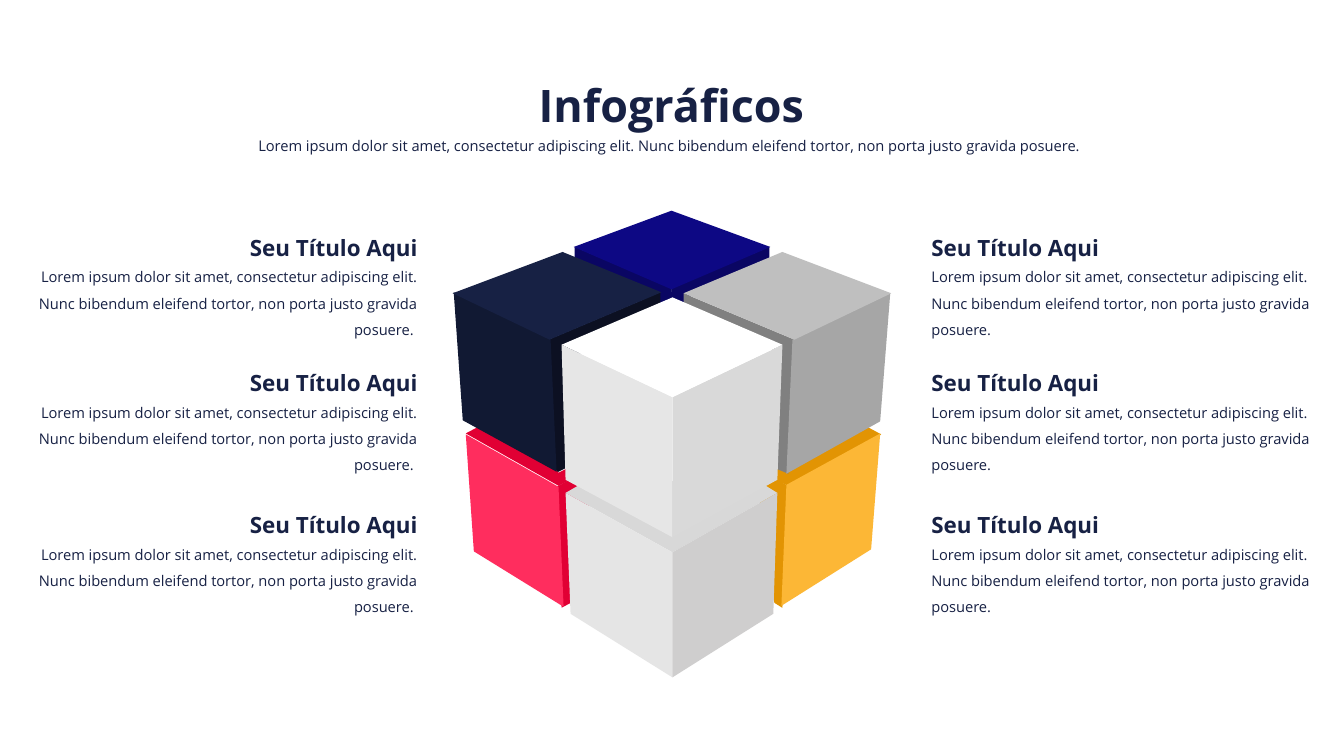
from dataclasses import dataclass

from pptx import Presentation
from pptx import util as u
from pptx.dml.color import RGBColor
from pptx.enum import text as t

COLORS = {
    "ink": "172144", "navy_top": "172144", "navy_left": "111933", "navy_inner": "0C1022",
    "blue_top": "0D0884", "blue_inner": "0A0663",
    "gray_top": "BFBFBF", "gray_right": "A6A6A6", "gray_inner": "808080",
    "white_top": "FFFFFF", "white_left": "E6E6E6", "white_right": "D9D9D9",
    "lower_top": "D8D8D8", "lower_left": "E5E5E5", "lower_right": "CFCECE",
    "red": "FF2D5E", "red_inner": "E10034",
    "amber": "FCB736", "amber_inner": "E29403",
}
FONT = "Open Sans"
HEADING = "Seu Título Aqui"
LOREM = ("Lorem ipsum dolor sit amet, consectetur adipiscing elit. "
         "Nunc bibendum eleifend tortor, non porta justo gravida posuere.")


@dataclass(frozen=True)
class Face:
    color: str
    points: tuple[tuple[float, float], ...]


@dataclass(frozen=True)
class Column:
    left: float
    align: t.PP_ALIGN
    body: str


# Cube faces, from back to front; corners in inches
FACES = [
    Face("blue_inner", ((5.7, 2.45), (5.7, 2.61), (6.37, 2.9), (6.4, 3.11), (6.67, 2.99), (6.66, 2.86))),
    Face("red_inner", ((5.57, 6.03), (5.89, 5.86), (5.82, 4.67), (5.52, 4.83))),
    Face("navy_inner", ((5.5, 4.7), (5.72, 4.59), (5.7, 3.54), (6.55, 3.05), (6.55, 2.9), (5.44, 3.37))),
    Face("amber_inner", ((7.82, 4.82), (7.47, 4.65), (7.33, 4.7), (7.37, 4.91),
                         (7.53, 4.99), (7.68, 5.98), (7.76, 6.03))),
    Face("blue_inner", ((6.66, 2.86), (7.63, 2.45), (7.63, 2.57), (6.85, 2.9), (6.86, 3.08), (6.66, 3.04))),
    Face("lower_top", ((5.61, 4.89), (5.87, 4.74), (7.58, 4.81), (7.71, 4.89), (6.67, 5.48))),
    Face("amber_inner", ((8.74, 4.31), (8.37, 4.11), (7.59, 4.41), (7.7, 4.77), (7.82, 4.82))),
    Face("red_inner", ((4.62, 4.3), (4.98, 4.11), (5.54, 4.69), (5.66, 4.63), (5.66, 4.76), (5.54, 4.82))),
    Face("red", ((4.7, 5.47), (5.59, 6.02), (5.54, 4.83), (4.62, 4.31))),
    Face("navy_left", ((4.59, 4.17), (5.52, 4.68), (5.46, 3.35), (4.5, 2.9))),
    Face("gray_inner", ((6.78, 2.91), (6.78, 3.07), (7.65, 3.45), (7.65, 4.63), (7.82, 4.7), (7.88, 3.37))),
    Face("white_left", ((5.57, 3.42), (5.61, 4.76), (6.67, 5.33), (6.67, 3.94))),
    Face("lower_left", ((6.67, 6.72), (6.67, 5.48), (5.61, 4.89), (5.66, 6.09))),
    Face("lower_right", ((6.67, 5.48), (7.71, 4.89), (7.67, 6.09), (6.67, 6.72))),
    Face("white_right", ((6.67, 3.94), (7.76, 3.42), (7.71, 4.76), (6.67, 5.33))),
    Face("gray_right", ((7.86, 3.37), (7.8, 4.7), (8.73, 4.18), (8.83, 2.91))),
    Face("amber", ((7.75, 6.01), (7.8, 4.81), (8.73, 4.3), (8.64, 5.45))),
    Face("white_top", ((5.57, 3.42), (6.67, 2.95), (7.76, 3.42), (6.67, 3.94))),
    Face("navy_top", ((4.49, 2.91), (5.58, 2.5), (6.56, 2.9), (5.45, 3.37))),
    Face("gray_top", ((7.88, 3.37), (6.78, 2.91), (7.76, 2.5), (8.84, 2.91))),
    Face("blue_top", ((6.66, 2.09), (7.64, 2.45), (6.66, 2.87), (5.69, 2.45))),
]

# The trailing space shifts the last line of right-aligned and centred text
COLUMNS = [
    Column(0.2, t.PP_ALIGN.RIGHT, LOREM + " "),
    Column(9.14, t.PP_ALIGN.LEFT, LOREM),
]
ROW_TOPS = [2.27, 3.61, 5.02]


def draw_face(shapes, face: Face) -> None:
    start, *others = [(u.Inches(x), u.Inches(y)) for x, y in face.points]
    builder = shapes.build_freeform(*start, scale=1.0)
    builder.add_line_segments(others, close=True)
    shape = builder.convert_to_shape()
    shape.shadow.inherit = False
    shape.fill.solid()
    shape.fill.fore_color.rgb = RGBColor.from_string(COLORS[face.color])
    shape.line.fill.background()


def write(box, text: str, *, size: float, align: t.PP_ALIGN,
          bold: bool = False, spacing: float = 1.0) -> None:
    frame = box.text_frame
    frame.word_wrap = True
    frame.auto_size = t.MSO_AUTO_SIZE.SHAPE_TO_FIT_TEXT
    frame.vertical_anchor = t.MSO_ANCHOR.TOP
    para = frame.paragraphs[0]
    para.alignment = align
    para.line_spacing = spacing
    span = para.add_run()
    span.text = text
    span.font.name = FONT
    span.font.size = u.Pt(size)
    span.font.bold = bold
    span.font.color.rgb = RGBColor.from_string(COLORS["ink"])


def add_box(page, left: float, top: float, width: float, height: float):
    return page.shapes.add_textbox(*map(u.Inches, (left, top, width, height)))


def main() -> None:
    deck = Presentation()
    deck.slide_width, deck.slide_height = u.Inches(13.33), u.Inches(7.5)
    page = deck.slides.add_slide(deck.slide_layouts[5])

    # Title and subtitle
    title = page.shapes.title
    title.left, title.top = u.Inches(0.38), u.Inches(0.72)
    title.width, title.height = u.Inches(12.56), u.Inches(0.64)
    write(title, "Infográficos", size=32, align=t.PP_ALIGN.CENTER, bold=True)
    write(add_box(page, 0.38, 1.22, 12.56, 0.37), LOREM + " ",
          size=10.5, align=t.PP_ALIGN.CENTER, spacing=1.5)

    # Cube
    cube = page.shapes.add_group_shape()
    for face in FACES:
        draw_face(cube.shapes, face)

    # Text blocks on both sides
    for column in COLUMNS:
        for top in ROW_TOPS:
            write(add_box(page, column.left, top, 4.04, 0.37), HEADING,
                  size=16, align=column.align, bold=True)
            write(add_box(page, column.left, top + 0.255, 4.04, 0.9), column.body,
                  size=10.5, align=column.align, spacing=1.5)

    deck.save("out.pptx")


if __name__ == "__main__":
    main()
